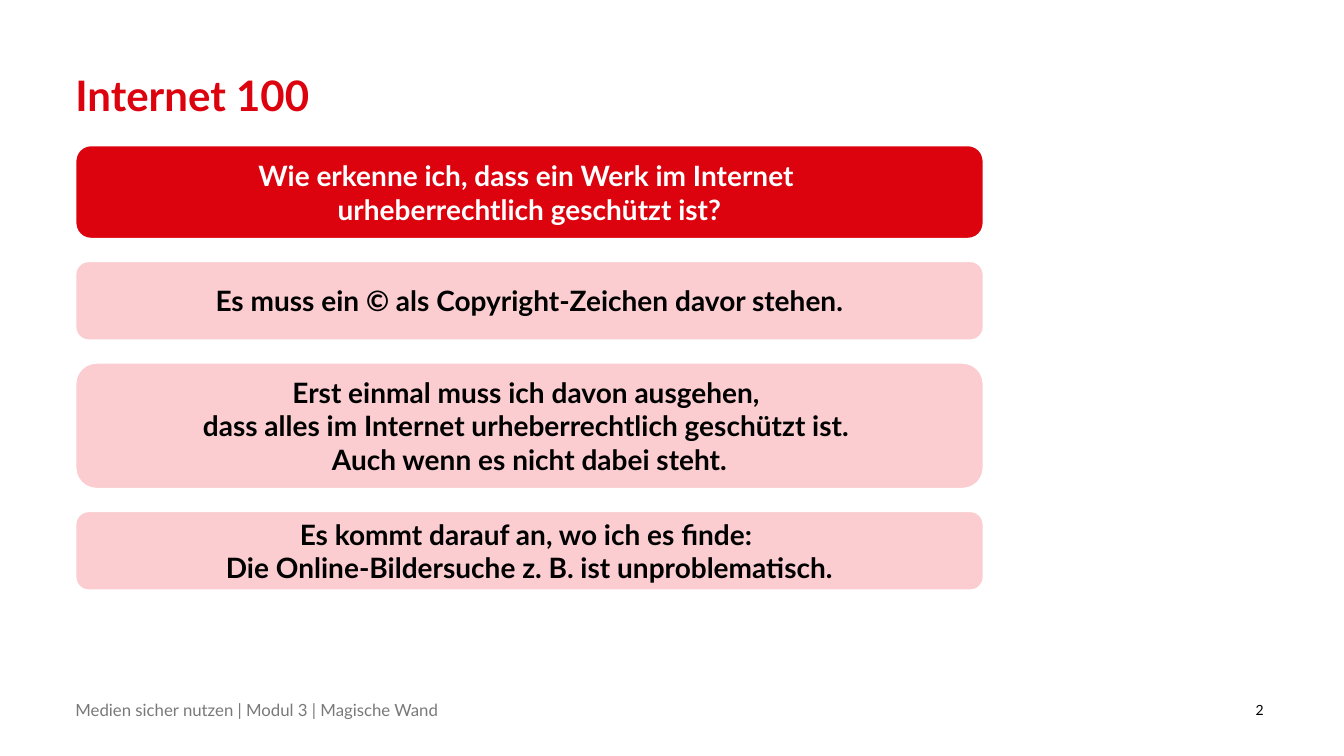
from dataclasses import dataclass

import pptx
import pptx.dml.color
import pptx.enum.shapes
import pptx.enum.text
import pptx.oxml
import pptx.oxml.ns
import pptx.util

Cm = pptx.util.Cm
Pt = pptx.util.Pt
ALIGN = pptx.enum.text.PP_ALIGN
ANCHOR = pptx.enum.text.MSO_ANCHOR

TITLE = "Internet 100"
QUESTION = "Wie erkenne ich, dass ein Werk im Internet \vurheberrechtlich geschützt ist?"
ANSWERS = [
    ("Es muss ein © als Copyright-Zeichen davor stehen.", 2.0),
    ("Erst einmal muss ich davon ausgehen, \v"
     "dass alles im Internet urheberrechtlich geschützt ist. \v"
     "Auch wenn es nicht dabei steht.", 3.18),
    ("Es kommt darauf an, wo ich es finde: \v"
     "Die Online-Bildersuche z. B. ist unproblematisch.", 2.0),
]
FOOTER = "Medien sicher nutzen | Modul 3 | Magische Wand"
PAGE = "2"


@dataclass(frozen=True)
class Theme:
    font: str = "Lato"
    red: str = "DC020E"
    pink: str = "FBC1C5"
    white: str = "FFFFFF"
    black: str = "000000"
    gray: str = "797979"
    title_size: int = 30
    card_size: int = 20
    footer_size: int = 12
    page_size: int = 10
    outline: float = 1.5
    pink_opacity: int = 80


theme = Theme()
LEFT, CARD_TOP, CARD_WIDTH, CARD_GAP = 1.9, 3.66, 22.89, 0.56
QUESTION_HEIGHT = 2.36
FOOTER_TOP, FOOTER_HEIGHT = 17.68, 0.4


def rgb(value):
    return pptx.dml.color.RGBColor.from_string(value)


def write(sp, text, size, color, bold=False, align=ALIGN.LEFT, anchor=ANCHOR.MIDDLE, inset=None):
    tf = sp.text_frame
    tf.text = text
    tf.word_wrap = True
    tf.auto_size = pptx.enum.text.MSO_AUTO_SIZE.NONE
    tf.vertical_anchor = anchor
    if inset is not None:
        tf.margin_left = tf.margin_right = tf.margin_top = tf.margin_bottom = Cm(inset)
    p = tf.paragraphs[0]
    p.alignment = align
    for r in p.runs:
        r.font.name = theme.font
        r.font.size = Pt(size)
        r.font.bold = bold
        r.font.color.rgb = rgb(color)
    return p


def add_card(s, text, top, height, fill, color, opacity=100):
    sp = s.shapes.add_shape(pptx.enum.shapes.MSO_SHAPE.ROUNDED_RECTANGLE,
                            Cm(LEFT), Cm(top), Cm(CARD_WIDTH), Cm(height))
    sp.shadow.inherit = False
    sp.fill.solid()
    sp.fill.fore_color.rgb = rgb(fill)
    if opacity < 100:
        srgb = sp.fill._xPr.find(".//" + pptx.oxml.ns.qn("a:srgbClr"))
        alpha = pptx.oxml.parse_xml(
            f'<a:alpha {pptx.oxml.ns.nsdecls("a")} val="{opacity * 1000}"/>')
        srgb.append(alpha)
    sp.line.color.rgb = rgb(theme.white)
    sp.line.width = Pt(theme.outline)
    write(sp, text, theme.card_size, color, bold=True, align=ALIGN.CENTER)


def add_label(s, text, left, width, size, color, align):
    sp = s.shapes.add_textbox(Cm(left), Cm(FOOTER_TOP), Cm(width), Cm(FOOTER_HEIGHT))
    write(sp, text, size, color, align=align, inset=0)


def main():
    prs = pptx.Presentation()
    prs.slide_width, prs.slide_height = Cm(33.87), Cm(19.05)
    s = prs.slides.add_slide(prs.slide_layouts[5])

    title = s.shapes.title
    title.left, title.top, title.width, title.height = Cm(LEFT), Cm(1.9), Cm(30), Cm(1.17)
    p = write(title, TITLE, theme.title_size, theme.red, bold=True, anchor=ANCHOR.TOP, inset=0)
    p.line_spacing = 0.9

    add_label(s, FOOTER, LEFT, 25, theme.footer_size, theme.gray, ALIGN.LEFT)
    add_label(s, PAGE, 30.07, 1.78, theme.page_size, theme.black, ALIGN.RIGHT)

    add_card(s, QUESTION, CARD_TOP, QUESTION_HEIGHT, theme.red, theme.white)
    top = CARD_TOP + QUESTION_HEIGHT + CARD_GAP
    for text, height in ANSWERS:
        add_card(s, text, top, height, theme.pink, theme.black, theme.pink_opacity)
        top += height + CARD_GAP

    prs.save("out.pptx")


if __name__ == "__main__":
    main()
